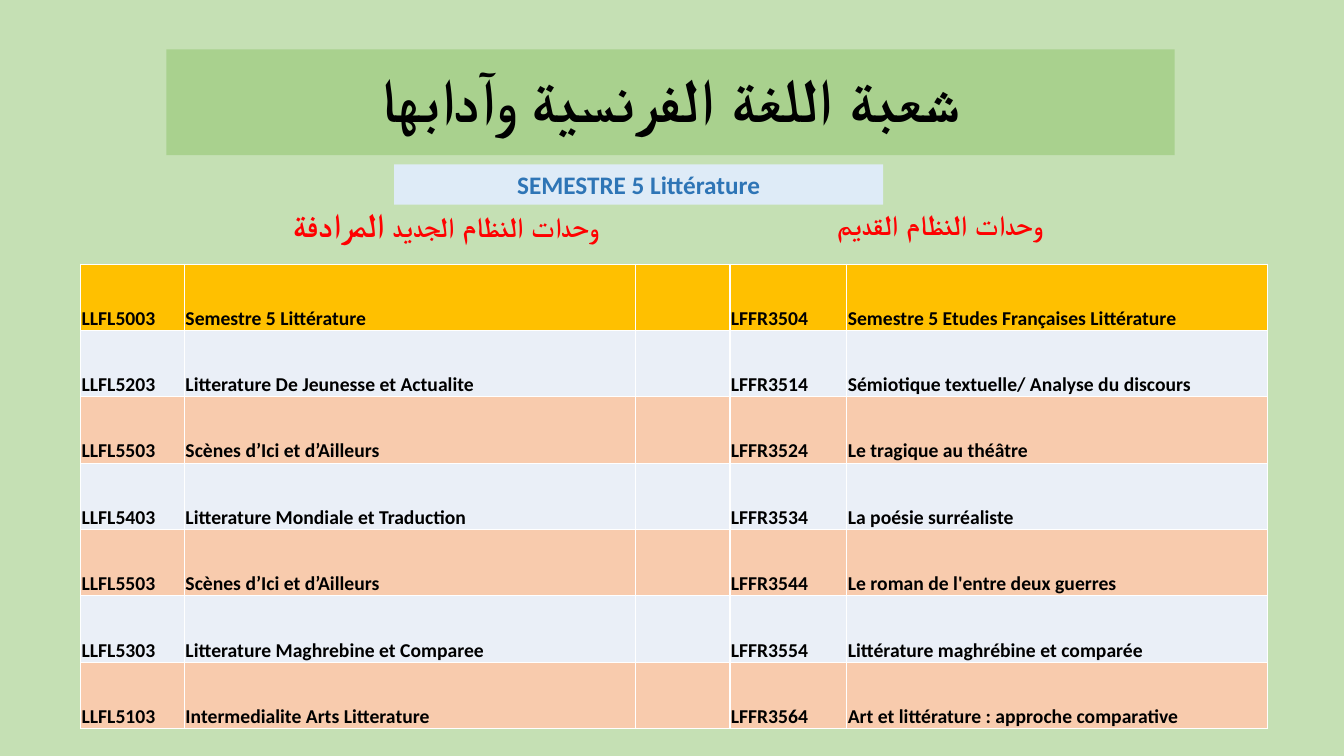
from pptx import Presentation
from pptx.util import Inches, Pt
from pptx.dml.color import RGBColor as RGB
from pptx.enum.shapes import MSO_SHAPE as Shape
from pptx.enum.text import PP_ALIGN as Align, MSO_ANCHOR as Anchor


def paint(fill, color):
    fill.solid()
    fill.fore_color.rgb = RGB.from_string(color)


def style(para, size, color, align=Align.CENTER):
    para.alignment = align
    for run in para.runs:
        font = run.font
        font.name, font.size, font.bold = "Calibri", Pt(size), True
        font.color.rgb = RGB.from_string(color)


deck = Presentation()
deck.slide_width, deck.slide_height = Inches(13.33), Inches(7.5)
slide = deck.slides.add_slide(deck.slide_layouts[5])
paint(slide.background.fill, "C5E0B4")

# Title band
title = slide.shapes.title
title.left, title.top = Inches(1.65), Inches(0.49)
title.width, title.height = Inches(10), Inches(1.05)
paint(title.fill, "A9D18E")
title.text_frame.text = "شعبة اللغة الفرنسية وآدابها"
title.text_frame.vertical_anchor = Anchor.MIDDLE
para = title.text_frame.paragraphs[0]
para.line_spacing = 0.9
style(para, 44, "000000")

# Headings above the two halves of the table
heads = [
    (2.19, 1.97, 0.5, ["وحدات النظام الجديد ", "المرادفة"]),
    (7.09, 2.01, 0.44, ["وحدات النظام القديم"]),
]
for left, top, height, parts in heads:
    box = slide.shapes.add_textbox(
        Inches(left), Inches(top), Inches(4.46), Inches(height))
    box.text_frame.word_wrap = True
    para = box.text_frame.paragraphs[0]
    for part in parts:
        para.add_run().text = part
    para._p.get_or_add_pPr().set("rtl", "1")
    style(para, 20, "FF0000")
    for run in para.runs[1:]:
        run.font.size = Pt(24)

# Semester label
label = slide.shapes.add_shape(
    Shape.RECTANGLE, Inches(3.91), Inches(1.63), Inches(4.85), Inches(0.4))
label.shadow.inherit = False
paint(label.fill, "DEEBF7")
label.line.fill.background()
label.text_frame.word_wrap = True
label.text_frame.vertical_anchor = Anchor.TOP
label.text_frame.text = "SEMESTRE 5 Littérature"
style(label.text_frame.paragraphs[0], 18, "2E75B6")

# Units: new code, new name, gap, old code, old name
units = [
    ("LLFL5003", "Semestre 5 Littérature", "",
     "LFFR3504", "Semestre 5 Etudes Françaises Littérature"),
    ("LLFL5203", "Litterature De Jeunesse et Actualite", "",
     "LFFR3514", "Sémiotique textuelle/ Analyse du discours"),
    ("LLFL5503", "Scènes d’Ici et d’Ailleurs", "",
     "LFFR3524", "Le tragique au théâtre"),
    ("LLFL5403", "Litterature Mondiale et Traduction", "",
     "LFFR3534", "La poésie surréaliste"),
    ("LLFL5503", "Scènes d’Ici et d’Ailleurs", "",
     "LFFR3544", "Le roman de l'entre deux guerres"),
    ("LLFL5303", "Litterature Maghrebine et Comparee", "",
     "LFFR3554", "Littérature maghrébine et comparée"),
    ("LLFL5103", "Intermedialite Arts Litterature", "",
     "LFFR3564", "Art et littérature : approche comparative"),
]
widths = [1.03, 4.47, 0.94, 1.16, 4.17]
table = slide.shapes.add_table(
    len(units), len(widths), Inches(0.8), Inches(2.62),
    Inches(sum(widths)), Inches(4.61)).table
table.first_row = table.horz_banding = False
for col, width in zip(table.columns, widths):
    col.width = Inches(width)

for i, unit in enumerate(units):
    color = "FFC000" if i == 0 else ("F8CBAD", "EAEFF7")[i % 2]
    for j, text in enumerate(unit):
        cell = table.cell(i, j)
        paint(cell.fill, color)
        if text:
            cell.text_frame.text = text
            cell.vertical_anchor = Anchor.BOTTOM
            cell.margin_left = cell.margin_right = Inches(0.01)
            cell.margin_top, cell.margin_bottom = Inches(0.01), 0
            style(cell.text_frame.paragraphs[0], 14, "000000", Align.LEFT)

deck.save("out.pptx")
